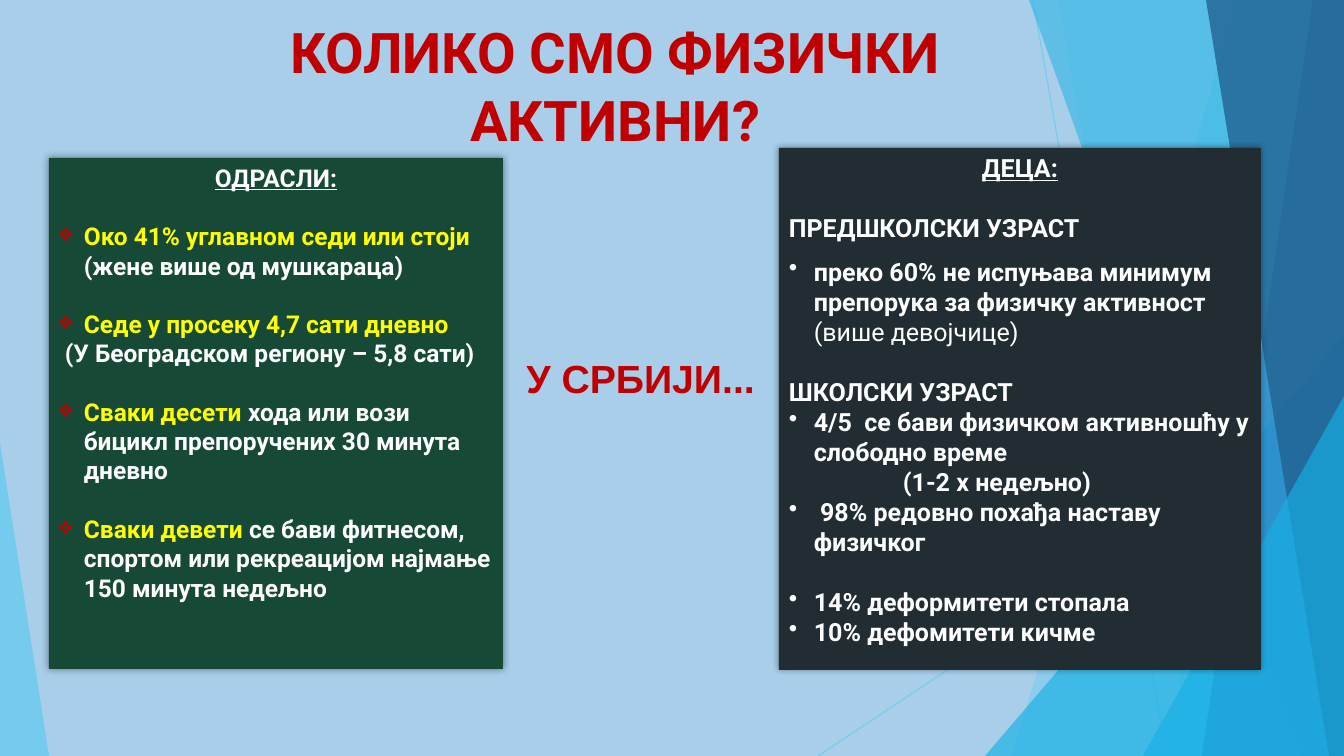
"""Build the slide on physical activity of adults and children in Serbia."""
from lxml.etree import SubElement
from pptx import Presentation
from pptx.dml.color import RGBColor
from pptx.enum.shapes import MSO_CONNECTOR as Connector, MSO_SHAPE as Shape
from pptx.enum.text import MSO_ANCHOR as Anchor, PP_ALIGN as Align
from pptx.oxml.ns import qn
from pptx.util import Pt

SCALE = 12192000 / 1344
WIDTH, HEIGHT = 1344, 756
SKY = RGBColor(0xA8, 0xCE, 0xEA)
CYAN = RGBColor(0x5F, 0xCB, 0xEF)
AZURE = RGBColor(0x17, 0xB0, 0xE4)
BLUE = RGBColor(0x2E, 0x83, 0xC3)
NAVY = RGBColor(0x22, 0x62, 0x92)
GREEN = RGBColor(0x17, 0x4A, 0x36)
SLATE = RGBColor(0x21, 0x2D, 0x32)
RED = RGBColor(0xC0, 0x00, 0x00)
YELLOW = RGBColor(0xFF, 0xFF, 0x00)
WHITE = RGBColor(0xFF, 0xFF, 0xFF)


def px(*lengths):
    return [round(length * SCALE) for length in lengths]


def write(shape, paragraphs, font):
    frame = shape.text_frame
    frame.word_wrap = True
    frame.vertical_anchor = Anchor.TOP
    for index, (layout, spans) in enumerate(paragraphs):
        para = frame.add_paragraph() if index else frame.paragraphs[0]
        para.alignment = layout.get("align", Align.LEFT)
        para.space_before = px(layout.get("gap", 0))[0]
        indent = layout.get("indent", 0)
        props = para._p.get_or_add_pPr()
        props.set("marL", str(px(indent)[0]))
        props.set("indent", "0")
        if "bullet" in layout:
            props.set("indent", str(-px(indent)[0]))
            colour = SubElement(props, qn("a:buClr"))
            SubElement(colour, qn("a:srgbClr"), val=str(layout["colour"]))
            SubElement(props, qn("a:buChar"), char=layout["bullet"])
        for text, colour, *changes in spans:
            span = para.add_run()
            span.text = text
            span.font.color.rgb = colour
            for name, value in {**font, **dict(changes)}.items():
                setattr(span.font, name, value)


deck = Presentation()
deck.slide_width, deck.slide_height = px(WIDTH, HEIGHT)
page = deck.slides.add_slide(deck.slide_layouts[6])
page.background.fill.solid()
page.background.fill.fore_color.rgb = SKY

for ends in [(1033, 0, 1167, HEIGHT), (WIDTH, 406, 818, HEIGHT)]:
    ray = page.shapes.add_connector(Connector.STRAIGHT, *px(*ends))
    ray.line.color.rgb = CYAN
    ray.line.width = Pt(0.75)
    SubElement(next(ray._element.spPr.iter(qn("a:srgbClr"))), qn("a:alpha"), val="70000")
    SubElement(ray._element.spPr, qn("a:effectLst"))

# Bands give top and bottom x; triangles give left, top, width, height and apex.
facets = [
    ((1238, 1012), CYAN, 36),
    ((1058, 1192), CYAN, 20),
    ((985, 336, 359, 420, 1), AZURE, 66),
    ((1029, 1301), AZURE, 50),
    ((1313, 1202), BLUE, 70),
    ((1206, 1329), NAVY, 80),
    ((1143, 396, 201, 360, 1), AZURE, 66),
    ((0, 443, 49, 313, 0), CYAN, 70),
]
for outline, colour, opacity in facets:
    if len(outline) == 2:
        top, bottom = outline
        band = page.shapes.build_freeform(top, 0, scale=SCALE)
        band.add_line_segments([(WIDTH, 0), (WIDTH, HEIGHT), (bottom, HEIGHT)])
        facet = band.convert_to_shape()
    else:
        *bounds, apex = outline
        facet = page.shapes.add_shape(Shape.ISOSCELES_TRIANGLE, *px(*bounds))
        facet.adjustments[0] = apex
    facet.shadow.inherit = False
    facet.line.fill.background()
    facet.fill.solid()
    facet.fill.fore_color.rgb = colour
    SubElement(next(facet._element.spPr.iter(qn("a:srgbClr"))), qn("a:alpha"), val=str(opacity * 1000))

diamond = {"indent": 25, "bullet": "❖", "colour": RED, "gap": 29}
dot = {"indent": 25, "bullet": "•", "colour": WHITE}
centred = {"align": Align.CENTER}
underlined = ("underline", True)
adults = [
    (centred, [("ОДРАСЛИ:", WHITE, underlined)]),
    (diamond, [("Око 41% углавном седи или стоји ", YELLOW), ("(жене више од мушкараца)", WHITE)]),
    (diamond, [("Седе у просеку 4,7 сати дневно", YELLOW)]),
    ({"indent": 6}, [("(У Београдском региону – 5,8 сати)", WHITE)]),
    (diamond, [("Сваки десети ", YELLOW), ("хода или вози бицикл препоручених 30 минута дневно", WHITE)]),
    (diamond, [("Сваки девети", YELLOW),
               (" се бави фитнесом, спортом или рекреацијом најмање 150 минута недељно", WHITE)]),
]
children = [
    (centred, [("ДЕЦА:", WHITE, underlined)]),
    ({"gap": 30}, [("ПРЕДШКОЛСКИ УЗРАСТ", WHITE)]),
    ({**dot, "gap": 13}, [("преко 60% не испуњава минимум препорука за физичку активност ", WHITE),
                          ("(више девојчице)", WHITE, ("bold", False))]),
    ({"gap": 30}, [("ШКОЛСКИ УЗРАСТ", WHITE)]),
    (dot, [("4/5  се бави физичком активношћу у слободно време", WHITE)]),
    ({"indent": 114}, [("(1-2 x недељно)", WHITE)]),
    (dot, [(" 98% редовно похађа наставу физичког", WHITE)]),
    ({**dot, "gap": 30}, [("14% деформитети стопала", WHITE)]),
    (dot, [("10% дефомитети кичме", WHITE)]),
]
panels = [
    ((49, 158, 454, 511), GREEN, adults, 17.5),
    ((779, 148, 482, 522), SLATE, children, 17.9),
]
for bounds, colour, paragraphs, size in panels:
    panel = page.shapes.add_shape(Shape.RECTANGLE, *px(*bounds))
    panel.fill.solid()
    panel.fill.fore_color.rgb = colour
    panel.line.fill.background()
    panel.shadow.inherit = False
    effects = panel._element.spPr.find(qn("a:effectLst"))
    glow = SubElement(effects, qn("a:outerShdw"), blurRad=str(Pt(5)), dist="0", dir="0", rotWithShape="0")
    shade = SubElement(glow, qn("a:srgbClr"), val="000000")
    SubElement(shade, qn("a:alpha"), val="40000")
    write(panel, paragraphs, {"name": "Roboto", "size": Pt(size), "bold": True})

headings = [
    ((414, 349, 453, 57), "У СРБИЈИ...", "Arial", 28),
    ((169, 13, 892, 146), "КОЛИКО СМО ФИЗИЧКИ АКТИВНИ?", "Roboto", 40),
]
for bounds, text, face, size in headings:
    box = page.shapes.add_textbox(*px(*bounds))
    write(box, [(centred, [(text, RED)])], {"name": face, "size": Pt(size), "bold": True})

deck.save("out.pptx")
